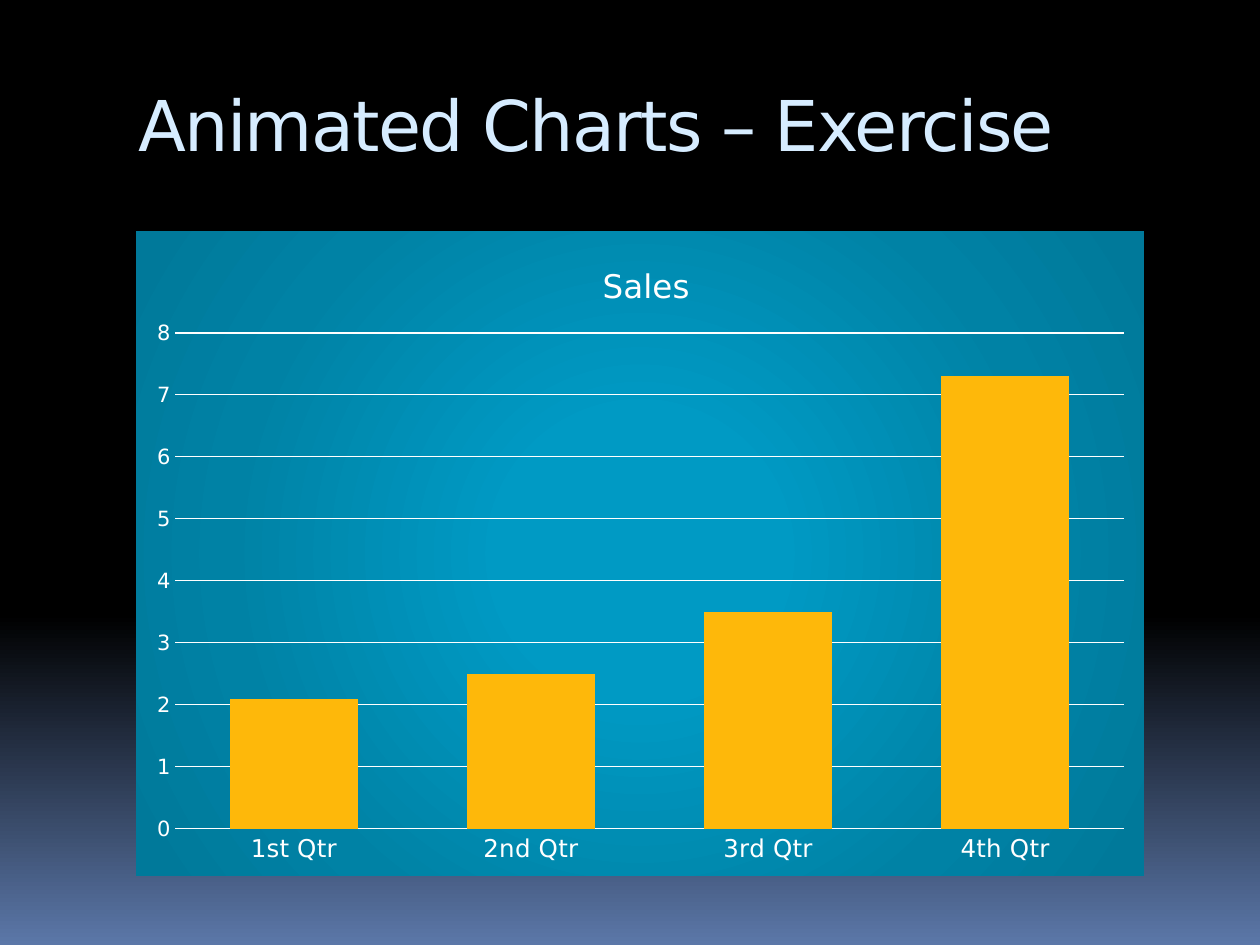
from lxml import etree
from pptx import Presentation
from pptx import util as u
from pptx.chart import data as chart_data
from pptx.dml.color import RGBColor
from pptx.enum import chart as charts, text
from pptx.oxml import ns

# Content
TITLE = "Animated Charts – Exercise"
SERIES = "Sales"
QUARTERS = {"1st Qtr": 2.1, "2nd Qtr": 2.5, "3rd Qtr": 3.5, "4th Qtr": 7.3}

FONT = "DejaVu Sans"
COLORS = {"title": "D6ECFF", "white": "FFFFFF", "bar": "FEB80A"}
BACKGROUND_STOPS = [(0, "000000"), (65, "000000"), (100, "5B77A8")]
CHART_STOPS = [(0, "009AC4"), (23, "009AC4"), (69, "0082A5"), (97, "00799A")]

# Geometry in px: left, top, width, height
SLIDE = (1260, 945)
TITLE_BOX = (126, 70, 1071, 126)
CHART_BOX = (136, 231, 1008, 645)
PLOT_BOX = (175, 333, 949, 496)
CHART_TITLE_AT = (597, 259)
PX = u.Inches(1) // 126


def px(*lengths):
    return [length * PX for length in lengths]


def style(font, size, color="white"):
    font.name, font.size, font.bold = FONT, u.Pt(size), False
    font.color.rgb = RGBColor.from_string(COLORS[color])


def add_text(frame, content, size, color="white", spacing=None):
    run = frame.paragraphs[0].add_run()
    run.text = content
    style(run.font, size, color)
    if spacing is not None:
        run.font._element.set("spc", str(int(spacing * 100)))


def gradient(stops, direction):
    """Return a gradFill element; direction is its a:lin or a:path markup."""
    marks = "".join(f'<a:gs pos="{position * 1000}"><a:srgbClr val="{color}"/></a:gs>'
                    for position, color in stops)
    return etree.fromstring(f'<a:gradFill {ns.nsdecls("a")} rotWithShape="1">'
                            f'<a:gsLst>{marks}</a:gsLst>{direction}</a:gradFill>')


def make_layout(box, inner=False):
    """Return a manual chart layout for a box given in slide px."""
    left, top, width, height = CHART_BOX
    values = [(box[0] - left) / width, (box[1] - top) / height]
    if len(box) == 4:
        values += [box[2] / width, box[3] / height]
    layout = etree.Element(ns.qn("c:layout"))
    manual = etree.SubElement(layout, ns.qn("c:manualLayout"))
    if inner:
        etree.SubElement(manual, ns.qn("c:layoutTarget"), val="inner")
    for name in ("xMode", "yMode"):
        etree.SubElement(manual, ns.qn(f"c:{name}"), val="edge")
    for name, value in zip("xywh", values):
        etree.SubElement(manual, ns.qn(f"c:{name}"), val=f"{value:.3f}")
    return layout


def place(parent, position, layout):
    for old in parent.findall(ns.qn("c:layout")):
        parent.remove(old)
    parent.insert(position, layout)


# Slide and background
presentation = Presentation()
presentation.slide_width, presentation.slide_height = px(*SLIDE)
slide = presentation.slides.add_slide(presentation.slide_layouts[5])
slide.background.fill.solid()
solid = slide._element.find(".//" + ns.qn("p:bgPr") + "/" + ns.qn("a:solidFill"))
solid.getparent().replace(
    solid, gradient(BACKGROUND_STOPS, '<a:lin ang="5400000" scaled="0"/>'))

# Title
title = slide.shapes.title
title.left, title.top, title.width, title.height = px(*TITLE_BOX)
frame = title.text_frame
frame.word_wrap = True
frame.auto_size = text.MSO_AUTO_SIZE.NONE
frame.vertical_anchor = text.MSO_ANCHOR.TOP
frame.margin_top = 12 * PX
frame.paragraphs[0].alignment = text.PP_ALIGN.LEFT
add_text(frame, TITLE, 40, "title", spacing=-1)

# Chart
data = chart_data.CategoryChartData()
data.categories = list(QUARTERS)
data.add_series(SERIES, list(QUARTERS.values()))
chart = slide.shapes.add_chart(
    charts.XL_CHART_TYPE.COLUMN_CLUSTERED, *px(*CHART_BOX), data).chart
style(chart.font, 10)
chart.has_legend = False
chart.has_title = True
add_text(chart.chart_title.text_frame, SERIES, 18.6)

plot = chart.plots[0]
plot.gap_width = 86
plot.vary_by_categories = False
bar_fill = plot.series[0].format.fill
bar_fill.solid()
bar_fill.fore_color.rgb = RGBColor.from_string(COLORS["bar"])

# Axes
for axis, size in ((chart.category_axis, 14), (chart.value_axis, 12)):
    style(axis.tick_labels.font, size)
    axis.major_tick_mark = axis.minor_tick_mark = charts.XL_TICK_MARK.NONE
    axis.format.line.fill.background()
value_axis = chart.value_axis
value_axis.minimum_scale, value_axis.maximum_scale, value_axis.major_unit = 0, 8, 1
value_axis.has_major_gridlines = True
grid_line = value_axis.major_gridlines.format.line
grid_line.width = u.Pt(0.75)
grid_line.color.rgb = RGBColor.from_string(COLORS["white"])

# Chart layout and radial fill
chart_space = chart._chartSpace
place(chart_space.chart.plotArea, 0, make_layout(PLOT_BOX, inner=True))
place(chart.chart_title._element, 1, make_layout(CHART_TITLE_AT))
properties = etree.Element(ns.qn("c:spPr"))
properties.append(gradient(
    CHART_STOPS,
    '<a:path path="circle"><a:fillToRect l="50000" t="50000" r="50000" b="50000"/></a:path>'))
outline = etree.SubElement(properties, ns.qn("a:ln"))
etree.SubElement(outline, ns.qn("a:noFill"))
chart_space.chart.addnext(properties)

presentation.save("out.pptx")
